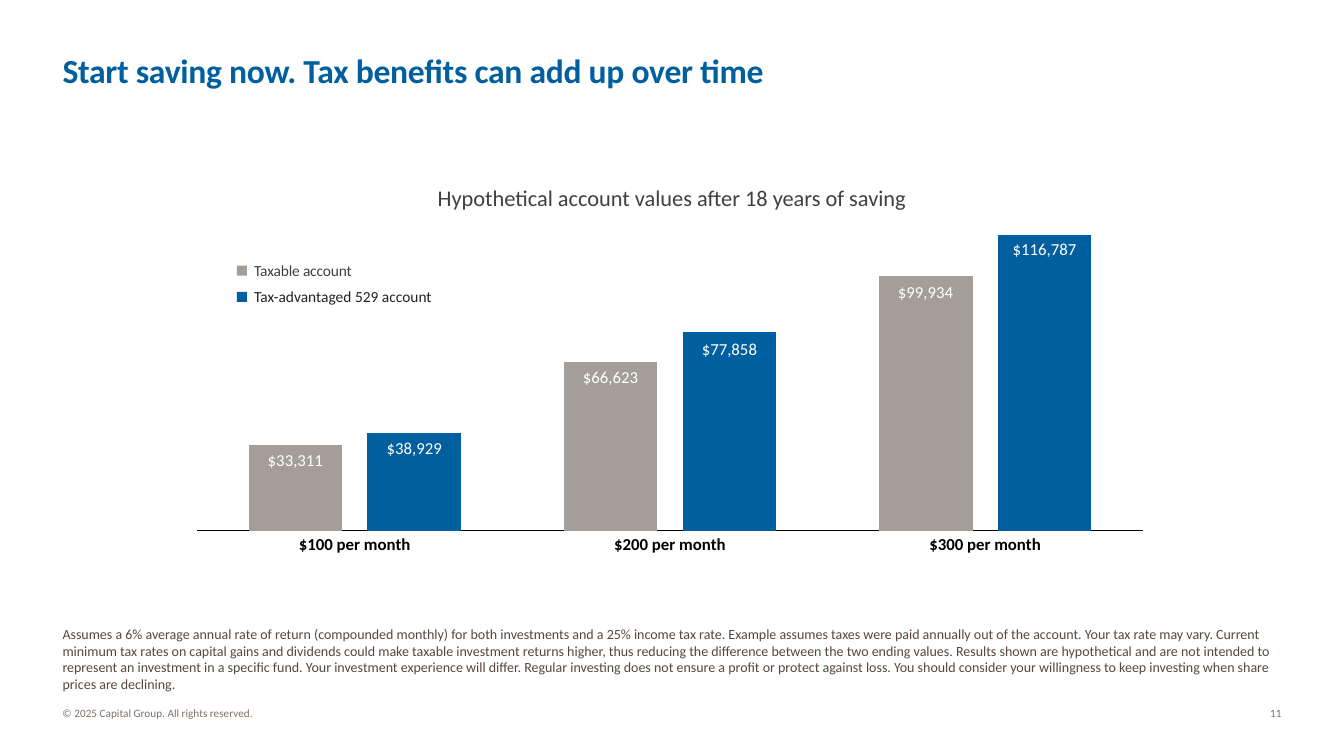
from lxml import etree
from pptx import Presentation
from pptx.chart.data import CategoryChartData
from pptx.dml.color import RGBColor
from pptx.enum.chart import XL_CHART_TYPE, XL_TICK_LABEL_POSITION, XL_TICK_MARK
from pptx.enum.shapes import MSO_SHAPE
from pptx.enum.text import MSO_ANCHOR, PP_ALIGN
from pptx.oxml.ns import qn
from pptx.util import Inches, Pt

BLUE = RGBColor(0x00, 0x5F, 0x9E)
GREY = RGBColor(0xA3, 0x9E, 0x99)
BLACK = RGBColor(0x00, 0x00, 0x00)
WHITE = RGBColor(0xFF, 0xFF, 0xFF)
CHARCOAL = RGBColor(0x40, 0x40, 0x40)
INK = RGBColor(0x22, 0x22, 0x22)
BROWN = RGBColor(0x55, 0x47, 0x42)
TAUPE = RGBColor(0x7D, 0x72, 0x6D)
FONT = "Calibri"
TOP, MIDDLE, BOTTOM = MSO_ANCHOR.TOP, MSO_ANCHOR.MIDDLE, MSO_ANCHOR.BOTTOM
LEFT, CENTER, RIGHT = PP_ALIGN.LEFT, PP_ALIGN.CENTER, PP_ALIGN.RIGHT
COLUMNS = XL_CHART_TYPE.COLUMN_CLUSTERED
NO_TICK = XL_TICK_MARK.NONE
NO_LABELS = XL_TICK_LABEL_POSITION.NONE
RECTANGLE = MSO_SHAPE.RECTANGLE

prs = Presentation()
prs.slide_width, prs.slide_height = Inches(13.33), Inches(7.5)
slide = prs.slides.add_slide(prs.slide_layouts[6])


def add_text(box, text, size, color, align=LEFT, anchor=TOP, wrap=True,
             bold=False, line_spacing=None, tracking=None):
    frame = slide.shapes.add_textbox(*map(Inches, box)).text_frame
    frame_format = {"margin_left": 0, "margin_top": 0, "margin_right": 0,
                    "margin_bottom": 0, "word_wrap": wrap, "vertical_anchor": anchor}
    for name, value in frame_format.items():
        setattr(frame, name, value)
    paragraph = frame.paragraphs[0]
    paragraph.alignment = align
    paragraph.line_spacing = line_spacing
    run = paragraph.add_run()
    run.text = text
    for name, value in {"name": FONT, "size": Pt(size), "bold": bold}.items():
        setattr(run.font, name, value)
    run.font.color.rgb = color
    if tracking is not None:
        run.font._element.set("spc", str(tracking))


# Title
add_text((0.62, 0, 12.08, 0.9), "Start saving now. Tax benefits can add up over time",
         24, BLUE, anchor=BOTTOM, bold=True, line_spacing=0.95, tracking=-20)

# Account value chart
accounts = CategoryChartData()
accounts.categories = [f"${amount} per month" for amount in (100, 200, 300)]
accounts.add_series("Taxable account", (29, 57, 86))
accounts.add_series("Tax-advantaged 529 account", (33, 67, 100))
chart = slide.shapes.add_chart(COLUMNS, Inches(1.75), Inches(1.56),
                               Inches(9.78), Inches(4.1), accounts).chart
chart.has_legend = False
chart.has_title = False
chart.font.name, chart.font.size = FONT, Pt(10)
chart.font.color.rgb = BLACK
columns = chart.plots[0]
columns.gap_width, columns.overlap = 111, -27
columns.vary_by_categories = False
for series, color in zip(columns.series, (GREY, BLUE)):
    series.format.fill.solid()
    series.format.fill.fore_color.rgb = color

month_axis, value_axis = chart.category_axis, chart.value_axis
axis_format = {"major_tick_mark": NO_TICK, "minor_tick_mark": NO_TICK,
               "has_major_gridlines": False}
for axis in (month_axis, value_axis):
    for name, value in axis_format.items():
        setattr(axis, name, value)
month_font = month_axis.tick_labels.font
for name, value in {"name": FONT, "size": Pt(12), "bold": True}.items():
    setattr(month_font, name, value)
month_font.color.rgb = BLACK
month_axis.format.line.color.rgb = BLACK
month_axis.format.line.width = Pt(0.5)
value_axis.minimum_scale, value_axis.maximum_scale = 0, 120
value_axis.tick_label_position = NO_LABELS
value_axis.format.line.fill.background()

# Fixed plot area inside the chart
plot_area = chart._chartSpace.chart.plotArea
for old_layout in plot_area.findall(qn("c:layout")):
    plot_area.remove(old_layout)
layout = etree.Element(qn("c:layout"))
plot_area.insert(0, layout)
manual = etree.SubElement(layout, qn("c:manualLayout"))
plot_layout = {"layoutTarget": "inner", "xMode": "edge", "yMode": "edge",
               "x": "0.021", "y": "0.044", "w": "0.959", "h": "0.86"}
for tag, value in plot_layout.items():
    etree.SubElement(manual, qn(f"c:{tag}")).set("val", value)

# Chart heading
add_text((4.03, 1.83, 5.27, 0.28), "Hypothetical account values after 18 years of saving",
         16, CHARCOAL, align=CENTER, wrap=False)

# Amounts at the top of each column
amounts = [
    (("$33,311", 4.41), ("$38,929", 4.29)),
    (("$66,623", 3.59), ("$77,858", 3.31)),
    (("$99,934", 2.75), ("$116,787", 2.32)),
]
for month, pair in enumerate(amounts):
    for account, (amount, top) in enumerate(pair):
        left = 2.48 + 3.125 * month + 1.18 * account
        add_text((left, top, 0.9, 0.3), amount, 12, WHITE,
                 align=CENTER, anchor=MIDDLE, wrap=False)

# Legend
legend = [("Taxable account", GREY, CHARCOAL, 2.59, 1.23, -10),
          ("Tax-advantaged 529 account", BLUE, INK, 2.85, 2.03, None)]
for account, color, text_color, top, width, tracking in legend:
    swatch = slide.shapes.add_shape(RECTANGLE, Inches(2.35), Inches(top + 0.045),
                                    Inches(0.1), Inches(0.1))
    swatch.shadow.inherit = False
    swatch.fill.solid()
    swatch.fill.fore_color.rgb = color
    swatch.line.fill.background()
    add_text((2.52, top, width, 0.19), account, 11, text_color, tracking=tracking)

# Assumptions
add_text(
    (0.62, 6.52, 12.01, 0.35),
    "Assumes a 6% average annual rate of return (compounded monthly) for both investments "
    "and a 25% income tax rate. Example assumes taxes were paid annually out of the account. "
    "Your tax rate may vary. Current minimum tax rates on capital gains and dividends could "
    "make taxable investment returns higher, thus reducing the difference between the two "
    "ending values. Results shown are hypothetical and are not intended to represent an "
    "investment in a specific fund. Your investment experience will differ. Regular investing "
    "does not ensure a profit or protect against loss. You should consider your willingness "
    "to keep investing when share prices are declining.",
    10, BROWN, anchor=BOTTOM)

# Footer
add_text((0.62, 7, 2.17, 0.14), "© 2025 Capital Group. All rights reserved.",
         8, TAUPE, anchor=BOTTOM)
add_text((11.93, 7, 0.78, 0.14), "11", 8, TAUPE, align=RIGHT, anchor=BOTTOM,
         line_spacing=1.1)

prs.save("out.pptx")
